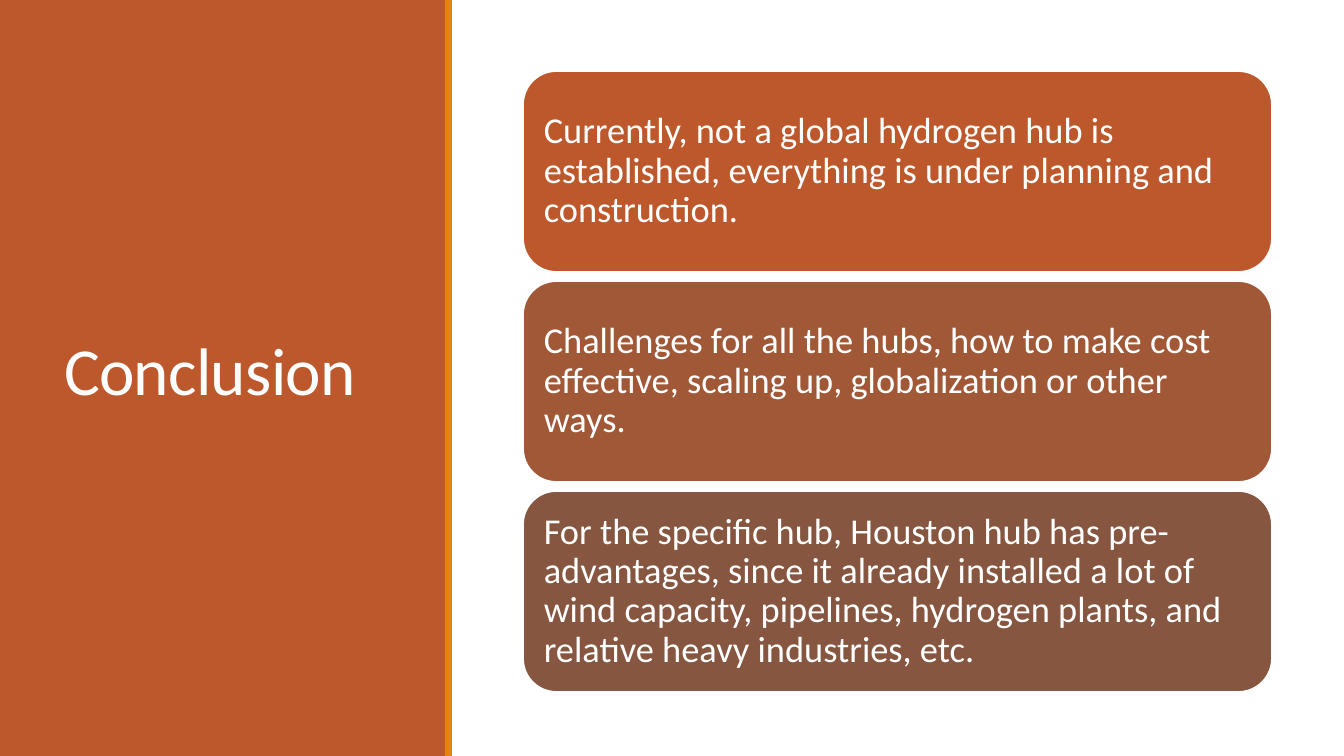
from dataclasses import dataclass

from pptx import Presentation
from pptx.dml.color import RGBColor
from pptx.enum.shapes import MSO_SHAPE as Kind
from pptx.enum.text import MSO_ANCHOR as Anchor, MSO_AUTO_SIZE as Fit, PP_ALIGN as Align
from pptx.shapes.autoshape import Shape
from pptx.slide import Slide
from pptx.text.text import TextFrame, _Run as Run
from pptx.util import Emu, Pt

SCALE = 914400 / 100.8
WIDTH, HEIGHT = 1344, 756
FONT = "Calibri"

WHITE = RGBColor(0xFF, 0xFF, 0xFF)
RUST = RGBColor(0xBD, 0x58, 0x2C)
AMBER = RGBColor(0xE4, 0x83, 0x12)
SIENNA = RGBColor(0xA0, 0x58, 0x37)
BROWN = RGBColor(0x86, 0x56, 0x40)

CARD_X, CARD_Y = 523, 71
CARD_W, CARD_H = 749, 201
PITCH = 210
INSET = 11


@dataclass(frozen=True)
class Box:
    left: int
    top: int
    width: int
    height: int


@dataclass(frozen=True)
class Card:
    text: str
    fill: RGBColor


PANEL = Box(0, 0, 446, HEIGHT)
STRIPE = Box(445, 0, 7, HEIGHT)
TITLE = Box(54, 57, 340, 636)

CARDS = [
    Card("Currently, not a global hydrogen hub is established, everything is "
         "under planning and construction.", RUST),
    Card("Challenges for all the hubs, how to make cost effective, scaling up, "
         "globalization or other ways.", SIENNA),
    Card("For the specific hub, Houston hub has pre-advantages, since it already "
         "installed a lot of wind capacity, pipelines, hydrogen plants, and "
         "relative heavy industries, etc.", BROWN),
]


def px(count: int) -> Emu:
    return Emu(round(count * SCALE))


def add_block(slide: Slide, kind: Kind, box: Box, fill: RGBColor) -> Shape:
    shape = slide.shapes.add_shape(
        kind, px(box.left), px(box.top), px(box.width), px(box.height))
    shape.shadow.inherit = False
    shape.fill.solid()
    shape.fill.fore_color.rgb = fill
    shape.line.fill.background()
    return shape


def write(frame: TextFrame, text: str, size: int, lead: float) -> Run:
    """Put one white, left-aligned paragraph in the middle of the frame."""
    frame.word_wrap = True
    frame.auto_size = Fit.NONE
    frame.vertical_anchor = Anchor.MIDDLE
    para = frame.paragraphs[0]
    para.alignment = Align.LEFT
    para.line_spacing = lead
    run = para.add_run()
    run.text = text
    run.font.name = FONT
    run.font.size = Pt(size)
    run.font.color.rgb = WHITE
    return run


def add_card(slide: Slide, card: Card, row: int) -> None:
    box = Box(CARD_X, CARD_Y + row * PITCH, CARD_W, CARD_H)
    shape = add_block(slide, Kind.ROUNDED_RECTANGLE, box, card.fill)
    shape.line.color.rgb = WHITE
    shape.line.width = Pt(1.25)
    frame = shape.text_frame
    frame.margin_left = frame.margin_right = px(INSET)
    frame.margin_top = frame.margin_bottom = px(INSET)
    write(frame, card.text, 26, 0.9)


def set_title(slide: Slide, text: str, box: Box) -> None:
    title = slide.shapes.title
    title.left, title.top = px(box.left), px(box.top)
    title.width, title.height = px(box.width), px(box.height)
    run = write(title.text_frame, text, 48, 0.85)
    run.font._element.set("spc", "-50")
    # Bring the title in front of the panel.
    title.element.getparent().append(title.element)


def main() -> None:
    deck = Presentation()
    deck.slide_width, deck.slide_height = px(WIDTH), px(HEIGHT)
    slide = deck.slides.add_slide(deck.slide_layouts.get_by_name("Title Only"))
    slide.background.fill.solid()
    slide.background.fill.fore_color.rgb = WHITE

    add_block(slide, Kind.RECTANGLE, PANEL, RUST)
    set_title(slide, "Conclusion", TITLE)
    add_block(slide, Kind.RECTANGLE, STRIPE, AMBER)
    for row, card in enumerate(CARDS):
        add_card(slide, card, row)
    deck.save("out.pptx")


if __name__ == "__main__":
    main()
